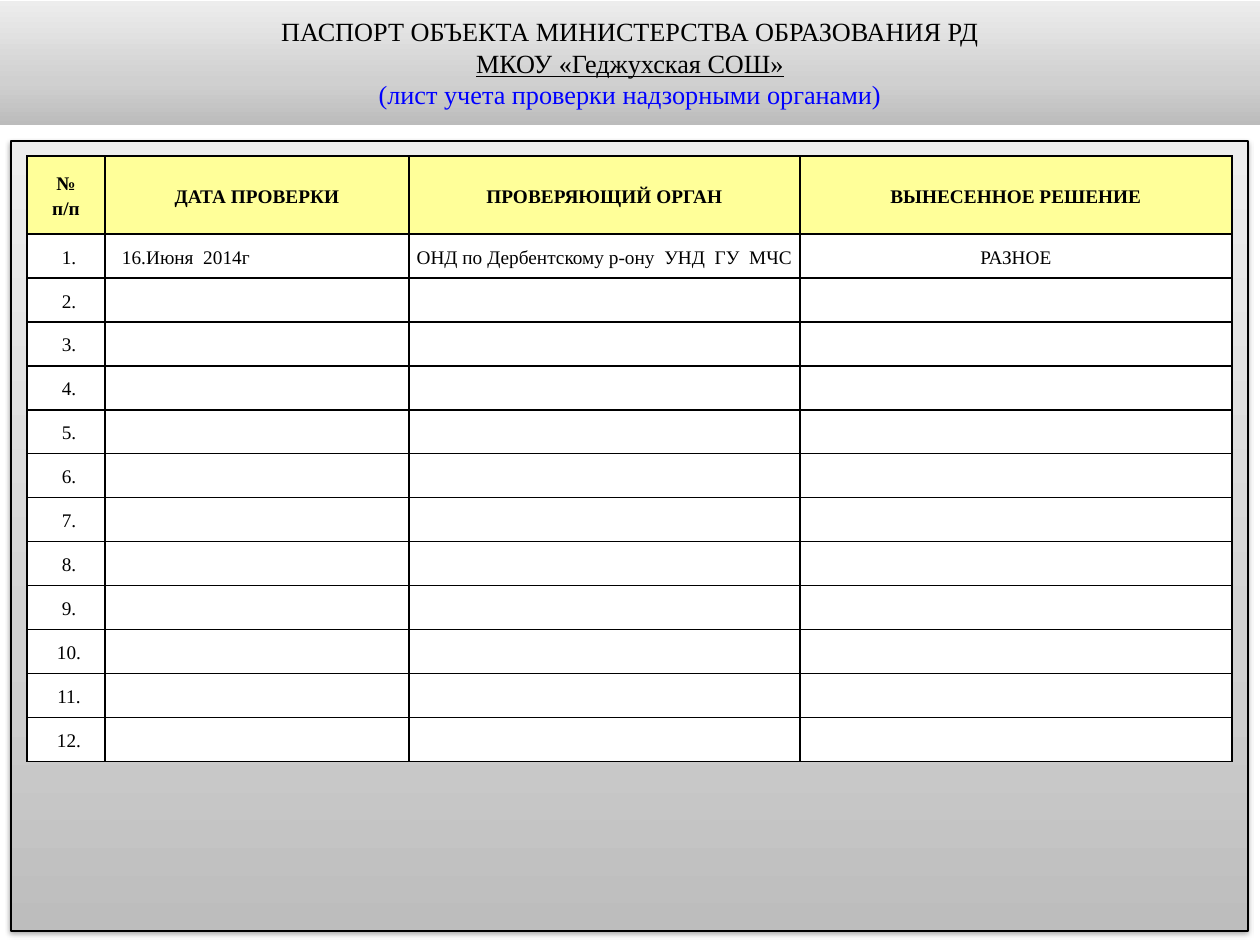
import copy

import pptx
import pptx.dml.color
import pptx.enum.shapes
import pptx.enum.text
import pptx.oxml
import pptx.oxml.ns
import pptx.util
from lxml import etree

PX = 914400 // 126
FONT = "Times New Roman"
COLORS = {"ink": "000000", "note": "0000FF", "header": "FFFF99", "cell": "FFFFFF"}
BANNER_STOPS = [(0, "BCBCBC"), (0.35, "D0D0D0"), (1, "EDEDED")]
PANEL_STOPS = [(0, "BDBDBD"), (0.35, "D1D1D1"), (1, "EEEEEE")]

TITLE = [  # text, colour, underlined
    ("ПАСПОРТ ОБЪЕКТА МИНИСТЕРСТВА ОБРАЗОВАНИЯ РД", "ink", False),
    ("МКОУ «Геджухская СОШ»", "ink", True),
    ("(лист учета проверки надзорными органами)", "note", False),
]
HEADERS = ["№\nп/п", "ДАТА ПРОВЕРКИ", "ПРОВЕРЯЮЩИЙ ОРГАН", "ВЫНЕСЕННОЕ РЕШЕНИЕ"]
INSPECTIONS = [
    ("16.Июня  2014г", "ОНД по Дербентскому р-ону  УНД  ГУ  МЧС", "РАЗНОЕ"),
]
ENTRY_COUNT = 12
COLUMN_WIDTHS = [78, 304, 391, 432]
HEADER_HEIGHT, ENTRY_HEIGHT = 78, 44
NUMBER_INDENT, DATE_INDENT = 6, 13

ALIGN = pptx.enum.text.PP_ALIGN
MIDDLE = pptx.enum.text.MSO_ANCHOR.MIDDLE
qn = pptx.oxml.ns.qn


def px(length):
    return pptx.util.Emu(length * PX)


def rgb(value):
    return pptx.dml.color.RGBColor.from_string(value)


def style_paragraph(paragraph, size, color="ink", bold=False, underline=False):
    for run in paragraph.runs:
        run.font.name = FONT
        run.font.size = pptx.util.Pt(size)
        run.font.bold = bold
        run.font.underline = underline
        run.font.color.rgb = rgb(COLORS[color])


def add_gradient_box(slide, box, stops):
    """Add a rectangle whose gradient runs from the bottom up."""
    shape = slide.shapes.add_shape(
        pptx.enum.shapes.MSO_SHAPE.RECTANGLE, *[px(n) for n in box])
    shape.shadow.inherit = False
    shape.fill.gradient()
    shape.fill.gradient_angle = 90
    stop_list = shape.element.spPr.find(".//" + qn("a:gsLst"))
    stop_list.append(copy.deepcopy(stop_list[0]))
    for stop, (position, color) in zip(shape.fill.gradient_stops, stops):
        stop.position = position
        stop.color.rgb = rgb(color)
    return shape


def add_drop_shadow(shape):
    effects = shape.element.spPr.find(qn("a:effectLst"))
    shadow = etree.SubElement(
        effects, qn("a:outerShdw"), blurRad=str(pptx.util.Pt(3.1)),
        dist=str(pptx.util.Pt(1.6)), dir="5400000", rotWithShape="0")
    color = etree.SubElement(shadow, qn("a:srgbClr"), val=COLORS["ink"])
    etree.SubElement(color, qn("a:alpha"), val="38000")


def add_borders(cell):
    properties = cell._tc.get_or_add_tcPr()
    for index, side in enumerate(("lnL", "lnR", "lnT", "lnB")):
        line = etree.Element(qn("a:" + side), w=str(pptx.util.Pt(1)))
        fill = etree.SubElement(line, qn("a:solidFill"))
        etree.SubElement(fill, qn("a:srgbClr"), val=COLORS["ink"])
        properties.insert(index, line)


def fill_cell(cell, text, row, column):
    is_header = row == 0
    cell.margin_left = cell.margin_right = px(4)
    cell.margin_top = cell.margin_bottom = 0
    cell.vertical_anchor = MIDDLE
    cell.fill.solid()
    cell.fill.fore_color.rgb = rgb(COLORS["header" if is_header else "cell"])
    add_borders(cell)
    cell.text_frame.text = text
    is_date = column == 1 and not is_header
    indent = 0 if is_header else {0: NUMBER_INDENT, 1: DATE_INDENT}.get(column, 0)
    for paragraph in cell.text_frame.paragraphs:
        paragraph.alignment = ALIGN.LEFT if is_date else ALIGN.CENTER
        fixed = column == 2 or (column > 0 and not is_header)
        paragraph.line_spacing = pptx.util.Pt(14) if fixed else 1.15
        paragraph._p.get_or_add_pPr().set("marL", str(px(indent)))
        style_paragraph(paragraph, 11, bold=is_header)


def add_banner(slide):
    banner = add_gradient_box(slide, (0, 1, 1260, 124), BANNER_STOPS)
    banner.line.fill.background()
    frame = banner.text_frame
    frame.word_wrap = True
    frame.vertical_anchor = MIDDLE
    frame.text = "\n".join(text for text, _, _ in TITLE)
    for paragraph, (_, color, underline) in zip(frame.paragraphs, TITLE):
        paragraph.alignment = ALIGN.CENTER
        style_paragraph(paragraph, 15, color, underline=underline)


def add_panel(slide):
    panel = add_gradient_box(slide, (11, 141, 1237, 790), PANEL_STOPS)
    panel.line.color.rgb = rgb(COLORS["ink"])
    panel.line.width = pptx.util.Pt(0.75)
    add_drop_shadow(panel)


def add_log(slide):
    blanks = [("", "", "")] * (ENTRY_COUNT - len(INSPECTIONS))
    entries = [(f"{number}.", *entry)
               for number, entry in enumerate(INSPECTIONS + blanks, 1)]
    rows = [HEADERS] + entries
    heights = [HEADER_HEIGHT] + [ENTRY_HEIGHT] * ENTRY_COUNT
    log = slide.shapes.add_table(
        len(rows), len(HEADERS), px(27), px(156),
        px(sum(COLUMN_WIDTHS)), px(sum(heights))).table
    for column, width in zip(log.columns, COLUMN_WIDTHS):
        column.width = px(width)
    for r, (texts, height) in enumerate(zip(rows, heights)):
        log.rows[r].height = px(height)
        for c, text in enumerate(texts):
            fill_cell(log.cell(r, c), text, r, c)


def main():
    deck = pptx.Presentation()
    deck.slide_width, deck.slide_height = px(1260), px(945)
    slide = deck.slides.add_slide(deck.slide_layouts[6])
    add_banner(slide)
    add_panel(slide)
    add_log(slide)
    deck.save("out.pptx")


if __name__ == "__main__":
    main()
